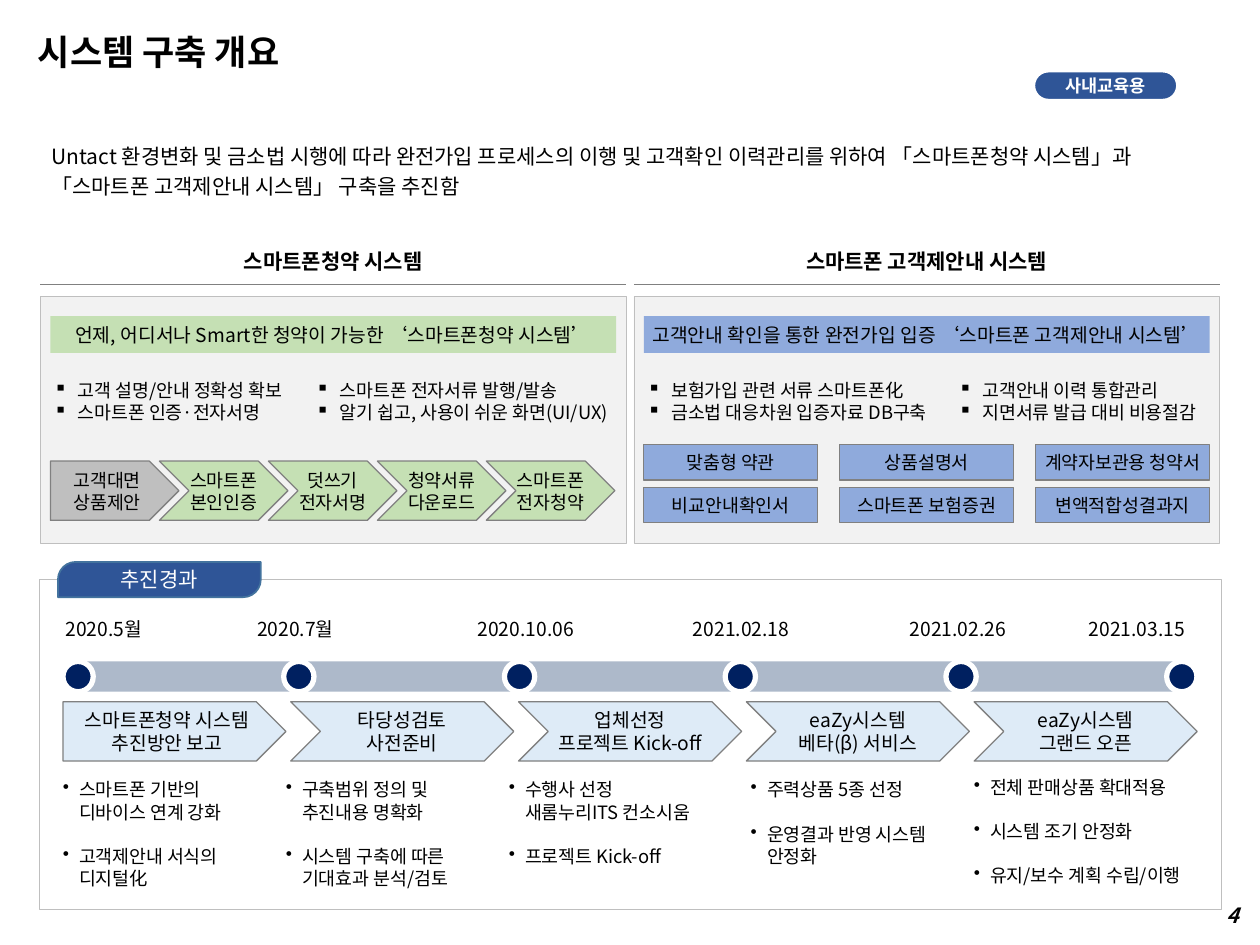
from dataclasses import dataclass

from pptx import Presentation
from pptx.dml.color import RGBColor
from pptx.enum.shapes import MSO_CONNECTOR as Connector, MSO_SHAPE as Shape
from pptx.enum.text import MSO_ANCHOR as Anchor, MSO_AUTO_SIZE as AutoSize, PP_ALIGN as Align
from pptx.oxml.ns import qn
from pptx.util import Inches, Pt
from lxml.etree import SubElement


@dataclass(frozen=True)
class Theme:
    font: str = "Noto Sans CJK KR"
    black: str = "000000"
    white: str = "FFFFFF"
    navy: str = "2F5597"
    tab_edge: str = "43739E"
    dot: str = "002060"
    bar: str = "ADB9CA"
    sky: str = "DEEBF7"
    blue: str = "8FAADC"
    green: str = "C5E0B4"
    gray: str = "BFBFBF"
    panel: str = "F2F2F2"
    edge: str = "808080"
    title: float = 20
    heading: float = 12
    label: float = 11
    body: float = 10.5
    badge: float = 10
    leading: float = 1.2


class SlideBuilder:
    """Places elements on a grid of 100 columns by 75 rows."""

    def __init__(self, presentation, theme):
        self.theme = theme
        self.column = presentation.slide_width / 100
        self.row = presentation.slide_height / 75
        self.slide = presentation.slides.add_slide(presentation.slide_layouts[5])

    def place(self, left, top, width, height):
        return (round(left * self.column), round(top * self.row),
                round(width * self.column), round(height * self.row))

    def fill_text(self, frame, lines, size, color=None, bold=False, italic=False,
                  align=Align.LEFT, anchor=Anchor.TOP, inset=(0.1, 0.05), wrap=True,
                  bullet=None, indent=0.19, gap=0):
        horizontal, vertical = (Inches(value) for value in inset)
        frame_format = {
            "auto_size": AutoSize.NONE, "word_wrap": wrap, "vertical_anchor": anchor,
            "margin_left": horizontal, "margin_right": horizontal,
            "margin_top": vertical, "margin_bottom": vertical}
        for name, value in frame_format.items():
            setattr(frame, name, value)
        for index, line in enumerate(lines):
            paragraph = frame.add_paragraph() if index else frame.paragraphs[0]
            paragraph.text = line
            paragraph_format = {"alignment": align, "space_before": Pt(gap if index else 0),
                                "line_spacing": Pt(size * self.theme.leading)}
            for name, value in paragraph_format.items():
                setattr(paragraph, name, value)
            if bullet:
                self.add_bullet(paragraph, bullet, indent)
            for run in paragraph.runs:
                font_format = {"name": self.theme.font, "size": Pt(size),
                               "bold": bold, "italic": italic}
                for name, value in font_format.items():
                    setattr(run.font, name, value)
                run.font.color.rgb = RGBColor.from_string(color or self.theme.black)
                SubElement(run._r.get_or_add_rPr(), qn("a:ea"), typeface=self.theme.font)

    def add_bullet(self, paragraph, character, indent):
        properties = paragraph._p.get_or_add_pPr()
        properties.set("marL", str(Inches(indent)))
        properties.set("indent", str(-Inches(indent)))
        SubElement(properties, qn("a:buChar"), char=character)

    def title(self, text, box):
        placeholder = self.slide.shapes.title
        for name, value in zip(("left", "top", "width", "height"), self.place(*box)):
            setattr(placeholder, name, value)
        self.fill_text(placeholder.text_frame, [text], self.theme.title, bold=True,
                       anchor=Anchor.MIDDLE)

    def text(self, lines, box, size, **style):
        shape = self.slide.shapes.add_textbox(*self.place(*box))
        self.fill_text(shape.text_frame, lines, size, **style)

    def shape(self, kind, box, fill=None, line=None, width=0.75, adjust=(),
              lines=(), size=None, **style):
        shape = self.slide.shapes.add_shape(kind, *self.place(*box))
        shape.shadow.inherit = False
        for index, value in enumerate(adjust):
            shape.adjustments[index] = value
        if fill:
            shape.fill.solid()
            shape.fill.fore_color.rgb = RGBColor.from_string(fill)
        else:
            shape.fill.background()
        if line:
            shape.line.color.rgb = RGBColor.from_string(line)
            shape.line.width = Pt(width)
        else:
            shape.line.fill.background()
        if lines:
            self.fill_text(shape.text_frame, lines, size, align=Align.CENTER,
                           anchor=Anchor.MIDDLE, inset=(0, 0), **style)

    def rule(self, left, top, length, color, width):
        x, y, span, _ = self.place(left, top, length, 0)
        line = self.slide.shapes.add_connector(Connector.STRAIGHT, x, y, x + span, y)
        line.line.color.rgb = RGBColor.from_string(color)
        line.line.width = Pt(width)
        SubElement(line._element.spPr, qn("a:effectLst"))

    def arrows(self, steps, left, top, pitch, width, size, fills):
        for index, (lines, fill) in enumerate(zip(steps, fills)):
            self.shape(Shape.CHEVRON if index else Shape.PENTAGON,
                       (left + index * pitch, top, width, 4.7), fill, self.theme.edge,
                       lines=lines, size=size)

    def panel(self, left, heading, message, color, columns):
        theme = self.theme
        self.shape(Shape.RECTANGLE, (left, 23.5, 46.5, 19.6), theme.panel, theme.gray, 0.25)
        self.rule(left, 22.6, 46.5, theme.edge, 0.5)
        self.text([heading], (left, 19.2, 46.5, 3), theme.heading, bold=True,
                  align=Align.CENTER)
        self.shape(Shape.RECTANGLE, (left + 0.8, 25.1, 44.9, 2.9), color,
                   lines=[message], size=theme.label)
        for x, width, items in columns:
            self.text(items, (x, 29.6, width, 4.7), theme.body, bullet="▪")


def main():
    presentation = Presentation()
    presentation.slide_width, presentation.slide_height = Inches(10), Inches(7.5)
    theme = Theme()
    page = SlideBuilder(presentation, theme)

    # Title, badge, page number and introduction
    page.title("시스템 구축 개요", (2, 2.1, 74.2, 4))
    page.shape(Shape.ROUNDED_RECTANGLE, (82, 5.6, 11.5, 2.4), theme.navy, theme.white, 2.25,
               adjust=[0.5], lines=["사내교육용"], size=theme.badge, color=theme.white,
               bold=True)
    page.text(["4"], (77.1, 71.1, 22.2, 3), theme.heading, bold=True, italic=True,
              align=Align.RIGHT, anchor=Anchor.MIDDLE)
    page.text(["Untact 환경변화 및 금소법 시행에 따라 완전가입 프로세스의 이행 및 고객확인 "
               "이력관리를 위하여 「스마트폰청약 시스템」과",
               "「스마트폰 고객제안내 시스템」 구축을 추진함"],
              (3.1, 10.9, 93.8, 5.4), theme.heading, gap=3)

    # Left panel: subscription system
    page.panel(3.2, "스마트폰청약 시스템",
               "언제, 어디서나 Smart한 청약이 가능한 ‘스마트폰청약 시스템’", theme.green,
               [(3.3, 20.5, ["고객 설명/안내 정확성 확보", "스마트폰 인증·전자서명"]),
                (24.1, 25.6, ["스마트폰 전자서류 발행/발송",
                              "알기 쉽고, 사용이 쉬운 화면(UI/UX)"])])
    page.arrows([["고객대면", "상품제안"], ["스마트폰", "본인인증"], ["덧쓰기", "전자서명"],
                 ["청약서류", "다운로드"], ["스마트폰", "전자청약"]],
                4, 36.6, 8.65, 10.2, theme.body, [theme.gray] + [theme.green] * 4)

    # Right panel: customer guidance system
    page.panel(50.3, "스마트폰 고객제안내 시스템",
               "고객안내 확인을 통한 완전가입 입증 ‘스마트폰 고객제안내 시스템’", theme.blue,
               [(50.4, 26, ["보험가입 관련 서류 스마트폰化", "금소법 대응차원 입증자료 DB구축"]),
                (75.1, 22, ["고객안내 이력 통합관리", "지면서류 발급 대비 비용절감"])])
    documents = ["맞춤형 약관", "상품설명서", "계약자보관용 청약서",
                 "비교안내확인서", "스마트폰 보험증권", "변액적합성결과지"]
    for index, name in enumerate(documents):
        row, column = divmod(index, 3)
        page.shape(Shape.RECTANGLE, (51.1 + column * 15.55, 35.3 + row * 3.4, 13.8, 2.8),
                   theme.blue, theme.edge, lines=[name], size=theme.body)

    # Progress frame and tab
    page.shape(Shape.RECTANGLE, (3.1, 46, 93.8, 26.2), line=theme.gray, width=0.25)
    page.shape(Shape.ROUND_2_DIAG_RECTANGLE, (4.6, 44.6, 16.1, 2.8), theme.navy,
               theme.tab_edge, 1, adjust=[0.5, 0], lines=["추진경과"], size=theme.heading,
               color=theme.white)

    # Timeline
    page.shape(Shape.RECTANGLE, (6.2, 52.5, 87.7, 2.4), theme.bar)
    dates = [(5.2, "2020.5월"), (20.4, "2020.7월"), (37.9, "2020.10.06"),
             (55, "2021.02.18"), (72.2, "2021.02.26"), (86.4, "2021.03.15")]
    for index, (left, date) in enumerate(dates):
        page.shape(Shape.OVAL, (5 + index * 17.52, 52.5, 2.4, 2.4), theme.dot,
                   theme.white, 3)
        page.text([date], (left, 48.5, 8.4, 2.9), theme.label, inset=(0, 0.05), wrap=False)

    # Project stages
    page.arrows([["스마트폰청약 시스템", "추진방안 보고"], ["타당성검토", "사전준비"],
                 ["업체선정", "프로젝트 Kick-off"], ["eaZy시스템", "베타(β) 서비스"],
                 ["eaZy시스템", "그랜드 오픈"]],
                5, 55.7, 18.08, 17.7, theme.label, [theme.sky] * 5)

    # Stage details
    details = [
        (4, 61.3, 18, ["스마트폰 기반의\v디바이스 연계 강화", "고객제안내 서식의\v디지털化"]),
        (21.7, 61.3, 18, ["구축범위 정의 및\v추진내용 명확화",
                          "시스템 구축에 따른\v기대효과 분석/검토"]),
        (39.4, 61.3, 19.1, ["수행사 선정\v새롬누리ITS 컨소시움", "프로젝트 Kick-off"]),
        (58.6, 61.3, 17.1, ["주력상품 5종 선정", "운영결과 반영 시스템\v안정화"]),
        (76.3, 61.1, 20.2, ["전체 판매상품 확대적용", "시스템 조기 안정화",
                            "유지/보수 계획 수립/이행"])]
    for left, top, width, items in details:
        page.text(items, (left, top, width, 9.8), theme.body, bullet="•", indent=0.13,
                  gap=theme.body * theme.leading)

    presentation.save("out.pptx")


if __name__ == "__main__":
    main()
